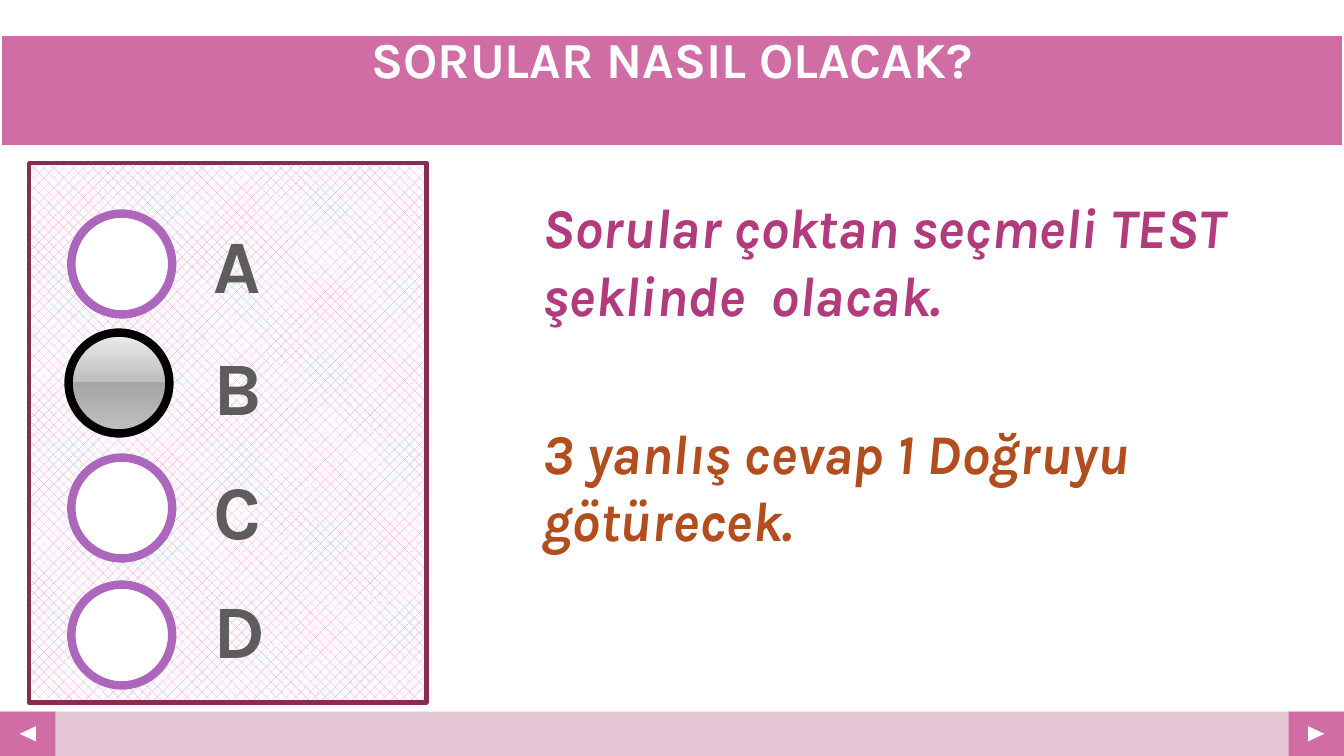
from dataclasses import dataclass

from lxml import etree
from pptx import Presentation
from pptx.dml.color import RGBColor
from pptx.enum.dml import MSO_PATTERN
from pptx.enum.shapes import MSO_SHAPE
from pptx.enum.text import MSO_ANCHOR, MSO_AUTO_SIZE, PP_ALIGN
from pptx.oxml import parse_xml
from pptx.oxml.ns import qn
from pptx.util import Pt

RECT, OVAL, TRIANGLE = MSO_SHAPE.RECTANGLE, MSO_SHAPE.OVAL, MSO_SHAPE.ISOSCELES_TRIANGLE
TOP, MIDDLE, BOTTOM = MSO_ANCHOR.TOP, MSO_ANCHOR.MIDDLE, MSO_ANCHOR.BOTTOM
LEFT, CENTER = PP_ALIGN.LEFT, PP_ALIGN.CENTER


@dataclass(frozen=True)
class Theme:
    font: str = "Karla"
    white: str = "FFFFFF"
    pink: str = "CF6DA4"
    pale_pink: str = "E5C6D5"
    hatch: str = "FB85D4"
    panel_border: str = "882D4D"
    ring: str = "AC66BB"
    chosen_ring: str = "000000"
    letter: str = "5D5D5D"
    title_size: int = 36
    statement_size: int = 40
    letter_size: int = 54


THEME = Theme()

TITLE = "SORULAR NASIL OLACAK?"
STATEMENTS = [  # text, colour, top
    ("Sorular çoktan seçmeli TEST şeklinde  olacak.", "B23B7E", 132.5),
    ("3 yanlış cevap 1 Doğruyu götürecek.", "B24D1D", 293.8),
]
OPTIONS = [  # letter, ring left, ring top, letter top
    ("A", 51, 152.6, 152),
    ("B", 49, 237.6, 239.4),
    ("C", 51, 326.9, 327.6),
    ("D", 51, 417.6, 412.6),
]
CHOSEN = "B"
CHOSEN_STOPS = [(0, "EEEEEE"), (49, "BDBDBD"), (49, "A4A4A4"), (92, "BDBDBD"), (100, "C8C8C8")]

SLIDE_W, SLIDE_H = 960, 540
FOOTER_H, BUTTON_W = 31.7, 39.6
ARROW_W, ARROW_H = 10.8, 11.5
RING_D = 72


def rgb(color):
    return RGBColor.from_string(color)


def place(shape, left, top, width, height):
    shape.left, shape.top, shape.width, shape.height = map(Pt, (left, top, width, height))


def paint(shape, fill, line=None, line_width=0):
    shape.fill.solid()
    shape.fill.fore_color.rgb = rgb(fill)
    if line:
        shape.line.color.rgb = rgb(line)
        shape.line.width = Pt(line_width)
    else:
        shape.line.fill.background()


def add_figure(slide, preset, box, fill, line=None, line_width=0):
    figure = slide.shapes.add_shape(preset, *map(Pt, box))
    figure.shadow.inherit = False
    paint(figure, fill, line, line_width)
    return figure


def fill_downward(shape, stops):
    """Replace the solid fill by a top-to-bottom gradient."""
    marks = "".join(f'<a:gs pos="{pos * 1000}"><a:srgbClr val="{color}"/></a:gs>'
                    for pos, color in stops)
    gradient = parse_xml(
        '<a:gradFill xmlns:a="http://schemas.openxmlformats.org/drawingml/2006/main">'
        f'<a:gsLst>{marks}</a:gsLst><a:lin ang="5400000" scaled="0"/></a:gradFill>')
    spPr = shape.element.spPr
    spPr.replace(spPr.find(qn("a:solidFill")), gradient)


def write(shape, text, size, color, align, anchor, insets, italic=False):
    """Fill a shape with one bold paragraph; insets are side, top and bottom."""
    frame = shape.text_frame
    frame.text = text
    frame.vertical_anchor = anchor
    frame.auto_size = MSO_AUTO_SIZE.NONE
    side, top, bottom = map(Pt, insets)
    frame.margin_left = frame.margin_right = side
    frame.margin_top, frame.margin_bottom = top, bottom
    paragraph = frame.paragraphs[0]
    paragraph.alignment = align
    paragraph.space_before = Pt(0)
    font = paragraph.runs[0].font
    font.name, font.size = THEME.font, Pt(size)
    font.bold, font.italic = True, italic
    font.color.rgb = rgb(color)


def remove_bullet(paragraph):
    pPr = paragraph._p.get_or_add_pPr()
    pPr.set("marL", "0")
    pPr.set("indent", "0")
    etree.SubElement(pPr, qn("a:buNone"))


def add_footer(slide):
    top = SLIDE_H - FOOTER_H
    add_figure(slide, RECT, (0, top, SLIDE_W, FOOTER_H), THEME.pale_pink)
    for left, rotation in ((0, 270), (SLIDE_W - BUTTON_W, 90)):
        add_figure(slide, RECT, (left, top, BUTTON_W, FOOTER_H), THEME.pink)
        arrow_box = (left + (BUTTON_W - ARROW_W) / 2, top + (FOOTER_H - ARROW_H) / 2,
                     ARROW_W, ARROW_H)
        add_figure(slide, TRIANGLE, arrow_box, THEME.white).rotation = rotation


def add_title(slide):
    title = slide.shapes.title
    place(title, 0, 24.5, SLIDE_W, 80.6)
    paint(title, THEME.pink, THEME.white, 2.5)
    write(title, TITLE, THEME.title_size, THEME.white, CENTER, BOTTOM, (3.6, 0, 42.1))


def add_statements(slide):
    for body, (text, color, top) in zip(list(slide.placeholders)[1:], STATEMENTS):
        place(body, 378, top, 510.5, 106.6)
        write(body, text, THEME.statement_size, color, LEFT, MIDDLE, (9.4, 5, 5), italic=True)
        remove_bullet(body.text_frame.paragraphs[0])


def add_answer_panel(slide):
    panel = add_figure(slide, RECT, (20.9, 116.6, 283.7, 385.2), THEME.white,
                       THEME.panel_border, 3.15)
    panel.fill.patterned()
    panel.fill.pattern = MSO_PATTERN.PERCENT_30
    panel.fill.fore_color.rgb = rgb(THEME.hatch)
    panel.fill.back_color.rgb = rgb(THEME.white)
    for letter, ring_left, ring_top, letter_top in OPTIONS:
        chosen = letter == CHOSEN
        ring = add_figure(slide, OVAL, (ring_left, ring_top, RING_D, RING_D), THEME.white,
                          THEME.chosen_ring if chosen else THEME.ring, 6)
        if chosen:
            fill_downward(ring, CHOSEN_STOPS)
        label = slide.shapes.add_textbox(*map(Pt, (145.4, letter_top, 49, 72.7)))
        label.text_frame.word_wrap = True
        write(label, letter, THEME.letter_size, THEME.letter, LEFT, TOP, (7.2, 3.6, 3.6))


def main():
    deck = Presentation()
    deck.slide_width, deck.slide_height = Pt(SLIDE_W), Pt(SLIDE_H)
    two_content = deck.slide_layouts[3]
    slide = deck.slides.add_slide(two_content)
    add_footer(slide)
    add_title(slide)
    add_statements(slide)
    add_answer_panel(slide)
    deck.save("out.pptx")


if __name__ == "__main__":
    main()
